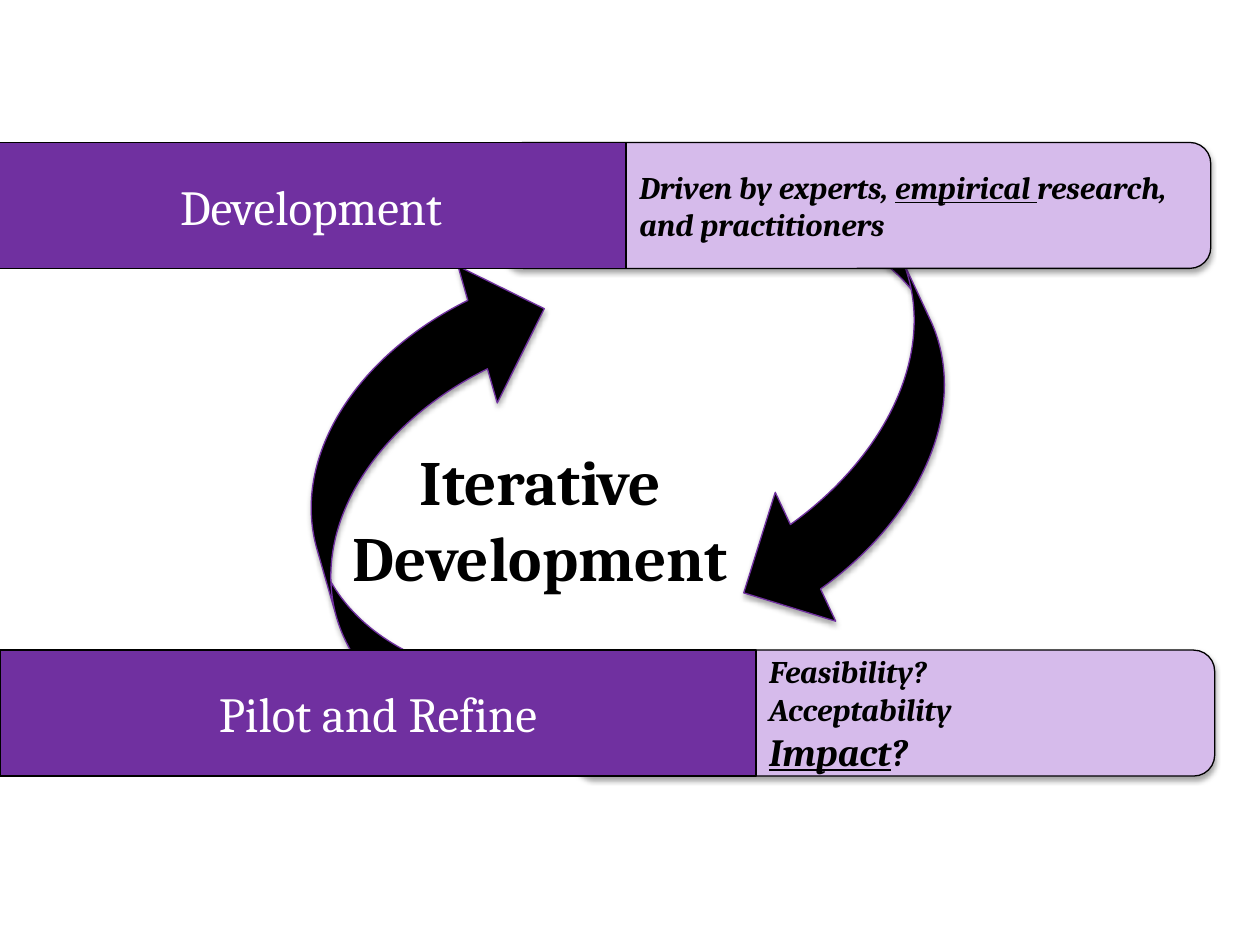
from dataclasses import dataclass

from lxml import etree
from pptx import Presentation
from pptx.dml.color import RGBColor
from pptx.enum.shapes import MSO_SHAPE
from pptx.enum.text import MSO_ANCHOR, PP_ALIGN
from pptx.oxml.ns import qn
from pptx.util import Pt

RECT = MSO_SHAPE.RECTANGLE
ROUND_RECT = MSO_SHAPE.ROUNDED_RECTANGLE
CURVED_ARROW = MSO_SHAPE.CURVED_DOWN_ARROW
MIDDLE = MSO_ANCHOR.MIDDLE
CENTER = PP_ALIGN.CENTER
LEFT = PP_ALIGN.LEFT


@dataclass(frozen=True)
class Theme:
    """Colours, font and type sizes of the slide."""
    purple: RGBColor = RGBColor(0x70, 0x30, 0xA0)
    lilac: RGBColor = RGBColor(0xD6, 0xBB, 0xEB)
    black: RGBColor = RGBColor(0, 0, 0)
    white: RGBColor = RGBColor(255, 255, 255)
    font: str = "Cambria"
    centre: int = 36
    label: int = 28
    impact: int = 22
    note: int = 18
    line: float = 0.75


THEME = Theme()


def add_shadow(sp):
    """Give a shape a soft shadow falling straight down."""
    effects = sp._element.spPr.find(qn("a:effectLst"))
    shadow = etree.SubElement(effects, qn("a:outerShdw"), blurRad=str(Pt(3.1)),
                              dist=str(Pt(1.8)), dir="5400000", rotWithShape="0")
    color = etree.SubElement(shadow, qn("a:srgbClr"), val=str(THEME.black))
    etree.SubElement(color, qn("a:alpha"), val="35000")


def add_box(shapes, kind, box, fill, line, shadow=False):
    """Add a filled and outlined preset shape."""
    sp = shapes.add_shape(kind, *map(Pt, box))
    sp.fill.solid()
    sp.fill.fore_color.rgb = fill
    sp.line.color.rgb = line
    sp.line.width = Pt(THEME.line)
    sp.shadow.inherit = False
    if shadow:
        add_shadow(sp)
    return sp


def write(sp, paragraphs, color, align=LEFT, bold=False, italic=False):
    """Fill a shape with paragraphs of (text, size, underline) runs."""
    tf = sp.text_frame
    tf.word_wrap = True
    tf.vertical_anchor = MIDDLE
    for i, runs in enumerate(paragraphs):
        p = tf.add_paragraph() if i else tf.paragraphs[0]
        p.alignment = align
        for text, size, underline in runs:
            r = p.add_run()
            r.text = text
            r.font.name = THEME.font
            r.font.size = Pt(size)
            r.font.color.rgb = color
            r.font.bold = bold
            r.font.italic = italic
            r.font.underline = underline


def add_cycle(slide, box):
    """Place the two turning arrows and the central label."""
    left, top, width, height = box
    arrow_w, arrow_h = 293.8, 162.7
    corners = ((left, top + height - arrow_h, 254),
               (left + width - arrow_w, top, 64.9))
    for x, y, rotation in corners:
        sp = add_box(slide.shapes, CURVED_ARROW, (x, y, arrow_w, arrow_h),
                     THEME.black, THEME.purple, shadow=True)
        sp.rotation = rotation


def add_centre(slide, box):
    """Place the label inside the cycle."""
    sp = slide.shapes.add_textbox(*map(Pt, box))
    write(sp, [[("Iterative Development", THEME.centre, False)]],
          THEME.black, CENTER, bold=True)


def add_band(slide, box, bar_w, panel_w, label, notes, note_w):
    """Place a purple stage bar over a rounded panel with its notes."""
    left, top, width, height = box
    shapes = slide.shapes.add_group_shape().shapes
    panel = (left + width - panel_w, top, panel_w, height)
    add_box(shapes, ROUND_RECT, panel, THEME.lilac, THEME.black, shadow=True)
    bar = add_box(shapes, RECT, (left, top, bar_w, height), THEME.purple, THEME.black)
    write(bar, [[(label, THEME.label, False)]], THEME.white, CENTER)
    note_box = (left + bar_w + 0.4, top, note_w, height)
    sp = shapes.add_textbox(*map(Pt, note_box))
    write(sp, notes, THEME.black, bold=True, italic=True)


def main():
    """Build the slide and save it."""
    prs = Presentation()
    prs.slide_width, prs.slide_height = Pt(720), Pt(540)
    slide = prs.slides.add_slide(prs.slide_layouts[6])
    add_cycle(slide, (115.2, 126.7, 485.3, 255.6))
    add_band(slide, (0, 371.5, 694.1, 72), 432, 365.8, "Pilot and Refine",
             [[("Feasibility?", THEME.note, False)],
              [("Acceptability", THEME.note, False)],
              [("Impact", THEME.impact, True), ("?", THEME.impact, False)]], 187.9)
    add_band(slide, (-2.2, 81.4, 694.1, 72), 360, 404.6, "Development",
             [[("Driven by experts, ", THEME.note, False),
               ("empirical ", THEME.note, True),
               ("research, and practitioners", THEME.note, False)]], 329.8)
    add_centre(slide, (185, 249.1, 247.7, 94.3))
    prs.save("out.pptx")


if __name__ == "__main__":
    main()
